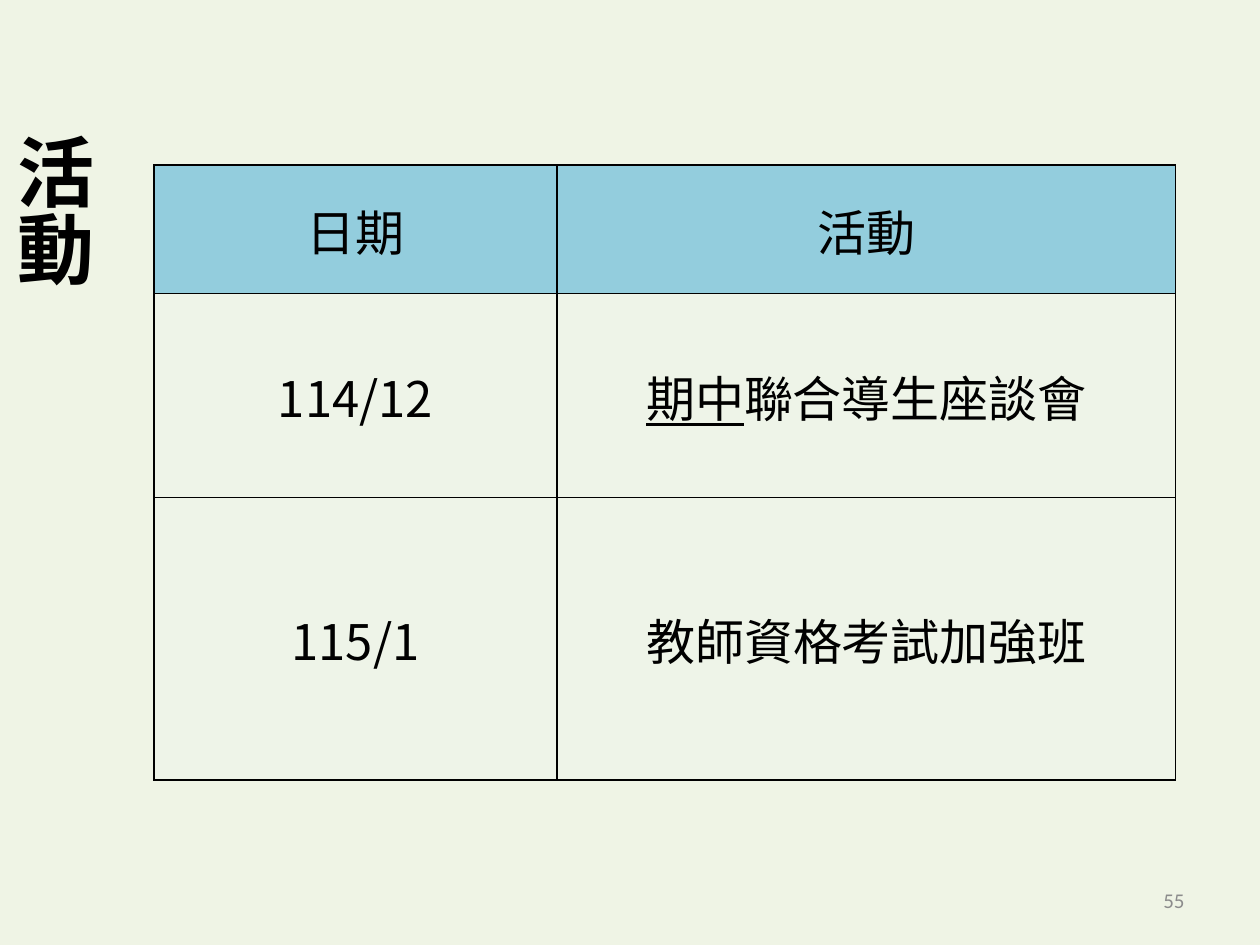
from pptx import Presentation
from pptx.dml.color import RGBColor
from pptx.enum.text import MSO_ANCHOR, MSO_AUTO_SIZE, PP_ALIGN
from pptx.oxml import parse_xml
from pptx.oxml.ns import nsdecls, qn
from pptx.util import Cm, Pt

COLORS = {
    "background": "EFF4E5",
    "header": "93CDDD",
    "body": "EEF4E8",
    "text": "000000",
    "border": "000000",
    "number": "8C8C8C",
}
CJK_FONT = "Noto Sans CJK SC"
LATIN_FONT = "Calibri"
TITLE_ONLY = 5

# Each cell is a list of (text, underlined) parts.
SCHEDULE = [
    [[("日期", False)], [("活動", False)]],
    [[("114/12", False)], [("期中", True), ("聯合導生座談會", False)]],
    [[("115/1", False)], [("教師資格考試加強班", False)]],
]


class SlideBuilder:
    def __init__(self, presentation):
        self.slide = presentation.slides.add_slide(presentation.slide_layouts[TITLE_ONLY])
        background = self.slide.background.fill
        background.solid()
        background.fore_color.rgb = self.color("background")

    @staticmethod
    def color(role):
        return RGBColor.from_string(COLORS[role])

    def style(self, paragraph, size, align, role="text", font=CJK_FONT, bold=False):
        paragraph.alignment = align
        paragraph.font.size = Pt(size)
        paragraph.font.bold = bold
        paragraph.font.color.rgb = self.color(role)
        paragraph.font.name = font
        defaults = paragraph._p.pPr.find(qn("a:defRPr"))
        defaults.append(parse_xml(f'<a:ea {nsdecls("a")} typeface="{font}"/>'))

    def title(self, text, left, top, width, height):
        title = self.slide.shapes.title
        title.left, title.top, title.width, title.height = map(Cm, (left, top, width, height))
        frame = title.text_frame
        frame.text = text
        frame.word_wrap = True
        frame.auto_size = MSO_AUTO_SIZE.NONE
        frame.vertical_anchor = MSO_ANCHOR.MIDDLE
        frame.paragraphs[0].line_spacing = 0.83
        self.style(frame.paragraphs[0], 44, PP_ALIGN.LEFT, bold=True)

    def border(self, cell):
        properties = cell._tc.get_or_add_tcPr()
        for position, side in enumerate(("lnL", "lnR", "lnT", "lnB")):
            properties.insert(position, parse_xml(
                f'<a:{side} {nsdecls("a")} w="{Pt(1)}"><a:solidFill>'
                f'<a:srgbClr val="{COLORS["border"]}"/></a:solidFill></a:{side}>'))

    def cell(self, cell, parts, role, side_margin):
        cell.fill.solid()
        cell.fill.fore_color.rgb = self.color(role)
        self.border(cell)
        cell.vertical_anchor = MSO_ANCHOR.MIDDLE
        cell.margin_left = cell.margin_right = Cm(side_margin)
        cell.margin_top, cell.margin_bottom = Cm(0.02), 0
        paragraph = cell.text_frame.paragraphs[0]
        for text, underlined in parts:
            run = paragraph.add_run()
            run.text = text
            if underlined:
                run.font.underline = True
        self.style(paragraph, 28, PP_ALIGN.CENTER)

    def table(self, rows, left, top, widths, heights):
        table = self.slide.shapes.add_table(
            len(rows), len(widths), Cm(left), Cm(top),
            Cm(sum(widths)), Cm(sum(heights))).table
        for column, width in zip(table.columns, widths):
            column.width = Cm(width)
        for index, (row, height) in enumerate(zip(rows, heights)):
            table.rows[index].height = Cm(height)
            role, side_margin = ("body", 0.13) if index else ("header", 0.08)
            for column, parts in enumerate(row):
                self.cell(table.cell(index, column), parts, role, side_margin)

    def page_number(self, number, left, top, width, height):
        box = self.slide.shapes.add_textbox(*map(Cm, (left, top, width, height)))
        frame = box.text_frame
        frame.text = number
        frame.word_wrap = True
        frame.vertical_anchor = MSO_ANCHOR.MIDDLE
        self.style(frame.paragraphs[0], 12, PP_ALIGN.RIGHT, "number", LATIN_FONT)


def main():
    presentation = Presentation()
    presentation.slide_width, presentation.slide_height = Cm(25.4), Cm(19.05)
    builder = SlideBuilder(presentation)
    builder.title("活動", 0.1, -1.07, 2.24, 10.9)
    builder.table(SCHEDULE, 3.1, 3.33, widths=(8.13, 12.47), heights=(2.59, 4.11, 5.69))
    builder.page_number("55", 18.2, 17.65, 5.93, 1.01)
    presentation.save("out.pptx")


if __name__ == "__main__":
    main()
